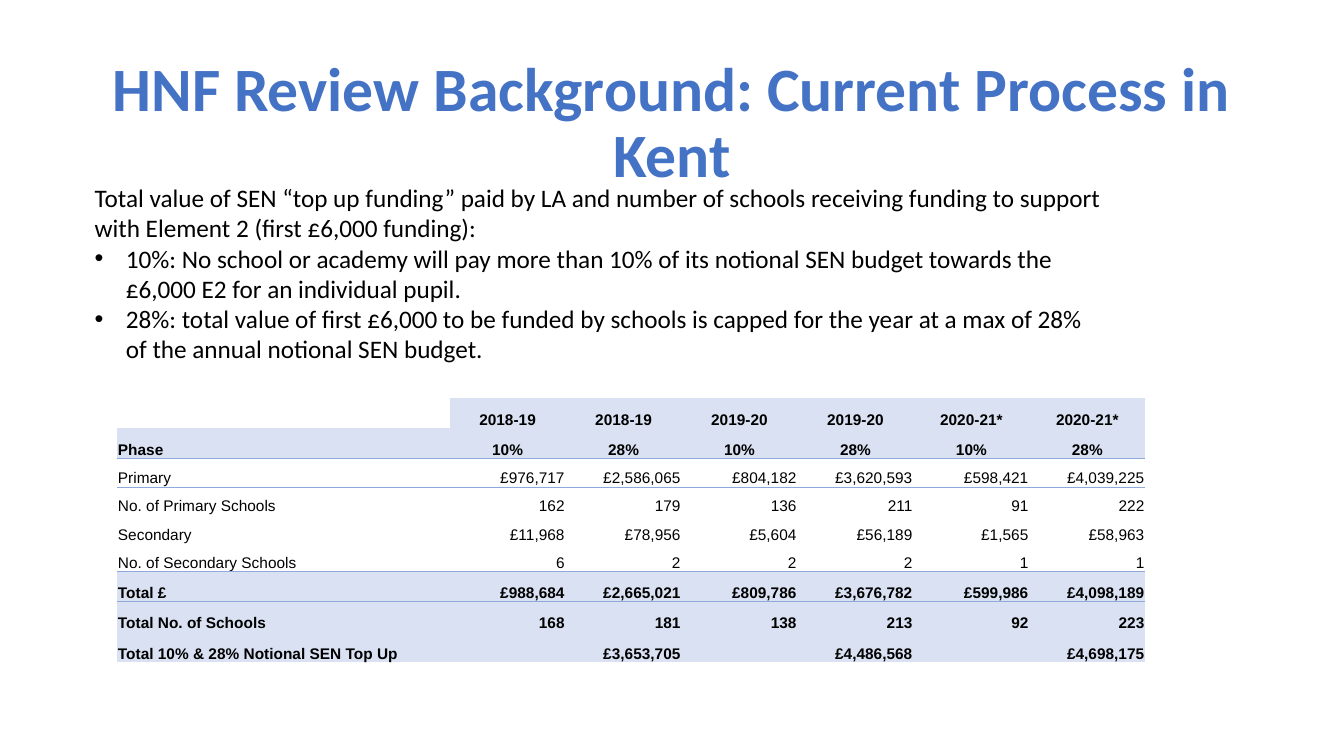
from lxml import etree
from pptx import Presentation
from pptx import util as u
from pptx.dml.color import RGBColor
from pptx.enum import text
from pptx.oxml import ns

TITLE_BLUE = RGBColor(0x44, 0x72, 0xC4)
BLACK = RGBColor(0, 0, 0)
BAND_BLUE = RGBColor(0xD9, 0xE1, 0xF2)
RULE_BLUE = RGBColor(0x8E, 0xA9, 0xDB)
NO_STYLE = "{2D5ABB26-0587-4C30-8999-92F81FD0307C}"

TITLE_FORMAT = {"name": "Calibri", "size": u.Pt(44), "bold": True}
BODY_FORMAT = {"name": "Calibri", "size": u.Pt(18)}
TABLE_FORMAT = {"name": "Arial", "size": u.Pt(11)}
CELL_FORMAT = {
    "margin_left": u.Inches(0.01), "margin_right": u.Inches(0.01),
    "margin_top": u.Inches(0.01), "margin_bottom": 0,
    "vertical_anchor": text.MSO_ANCHOR.BOTTOM,
}

TITLE = "HNF Review Background: Current Process in Kent"
INTRODUCTION = (
    "Total value of SEN “top up funding” paid by LA and number of schools "
    "receiving funding to support with Element 2 (first £6,000 funding):"
)
RULES = [
    "10%: No school or academy will pay more than 10% of its notional SEN budget "
    "towards the £6,000 E2 for an individual pupil.",
    "28%: total value of first £6,000 to be funded by schools is capped for the year "
    "at a max of 28% of the annual notional SEN budget.",
]
FUNDING = [
    ["", "2018-19", "2018-19", "2019-20", "2019-20", "2020-21*", "2020-21*"],
    ["Phase", "10%", "28%", "10%", "28%", "10%", "28%"],
    ["Primary", "£976,717", "£2,586,065", "£804,182", "£3,620,593", "£598,421", "£4,039,225"],
    ["No. of Primary Schools", "162", "179", "136", "211", "91", "222"],
    ["Secondary", "£11,968", "£78,956", "£5,604", "£56,189", "£1,565", "£58,963"],
    ["No. of Secondary Schools", "6", "2", "2", "2", "1", "1"],
    ["Total £", "£988,684", "£2,665,021", "£809,786", "£3,676,782", "£599,986", "£4,098,189"],
    ["Total No. of Schools", "168", "181", "138", "213", "92", "223"],
    ["Total 10% & 28% Notional SEN Top Up", "", "£3,653,705", "", "£4,486,568", "", "£4,698,175"],
]
HEADER_ROWS = 2
FIRST_TOTAL_ROW = 6
RULED_EDGES = {1: "a:lnB", 2: "a:lnT", 5: "a:lnB", 6: "a:lnT"}


def apply_format(target, values):
    """Set each attribute named in values on the target."""
    for name, value in values.items():
        setattr(target, name, value)


def write_run(paragraph, wording, values, color):
    """Add a formatted run to the paragraph."""
    run = paragraph.add_run()
    run.text = wording
    apply_format(run.font, values)
    run.font.color.rgb = color


def add_text_frame(slide, box):
    """Add a wrapping text box and return its text frame."""
    frame = slide.shapes.add_textbox(*map(u.Inches, box)).text_frame
    frame.word_wrap = True
    return frame


def add_title(slide, box):
    """Place the centred slide title in the box."""
    frame = add_text_frame(slide, box)
    frame.vertical_anchor = text.MSO_ANCHOR.MIDDLE
    paragraph = frame.paragraphs[0]
    apply_format(paragraph, {"alignment": text.PP_ALIGN.CENTER, "line_spacing": 0.9})
    write_run(paragraph, TITLE, TITLE_FORMAT, TITLE_BLUE)


def add_explanation(slide, box):
    """Place the introduction and the bulleted funding rules in the box."""
    frame = add_text_frame(slide, box)
    write_run(frame.paragraphs[0], INTRODUCTION, BODY_FORMAT, BLACK)
    for rule in RULES:
        paragraph = frame.add_paragraph()
        write_run(paragraph, rule, BODY_FORMAT, BLACK)
        properties = paragraph._p.get_or_add_pPr()
        properties.set("marL", str(u.Inches(0.31)))
        properties.set("indent", str(-u.Inches(0.31)))
        etree.SubElement(properties, ns.qn("a:buFont"), typeface="Arial")
        etree.SubElement(properties, ns.qn("a:buChar"), char="•")


def add_rule(cell, edge):
    """Draw a thin line on one edge of the cell."""
    line = etree.Element(ns.qn(edge), w=str(u.Pt(0.5)))
    fill = etree.SubElement(line, ns.qn("a:solidFill"))
    etree.SubElement(fill, ns.qn("a:srgbClr"), val=str(RULE_BLUE))
    cell._tc.get_or_add_tcPr().insert(0, line)


def fill_cell(cell, wording, row, column):
    """Write and format one cell according to its place in the table."""
    is_header = row < HEADER_ROWS
    is_band = is_header or row >= FIRST_TOTAL_ROW
    apply_format(cell, CELL_FORMAT)
    paragraph = cell.text_frame.paragraphs[0]
    if column:
        paragraph.alignment = text.PP_ALIGN.CENTER if is_header else text.PP_ALIGN.RIGHT
    if wording:
        write_run(paragraph, wording, {**TABLE_FORMAT, "bold": is_band}, BLACK)
    else:
        etree.SubElement(paragraph._p, ns.qn("a:endParaRPr"), sz="1100")
    if is_band and (row or column):
        cell.fill.solid()
        cell.fill.fore_color.rgb = BAND_BLUE
    else:
        cell.fill.background()
    if row in RULED_EDGES:
        add_rule(cell, RULED_EDGES[row])


def add_funding_table(slide, box):
    """Place the funding table in the box."""
    frame = slide.shapes.add_table(len(FUNDING), len(FUNDING[0]), *map(u.Inches, box))
    table = frame.table
    apply_format(table, {"first_row": False, "horz_banding": False})
    table._tbl.tblPr.find(ns.qn("a:tableStyleId")).text = NO_STYLE
    for index, column in enumerate(table.columns):
        column.width = u.Inches(1.15 if index else 3.3)
    for row, values in enumerate(FUNDING):
        is_body = HEADER_ROWS <= row < FIRST_TOTAL_ROW
        table.rows[row].height = u.Inches(0.28 if is_body else 0.3)
        for column, wording in enumerate(values):
            fill_cell(table.cell(row, column), wording, row, column)


def main():
    """Build and save the presentation."""
    presentation = Presentation()
    presentation.slide_width = u.Inches(13.33)
    presentation.slide_height = u.Inches(7.5)
    slide = presentation.slides.add_slide(presentation.slide_layouts[6])
    add_title(slide, (0.46, 0.51, 12.41, 1.45))
    add_funding_table(slide, (1.16, 3.95, 10.19, 2.62))
    add_explanation(slide, (0.84, 1.76, 10.19, 1.92))
    presentation.save("out.pptx")


if __name__ == "__main__":
    main()
